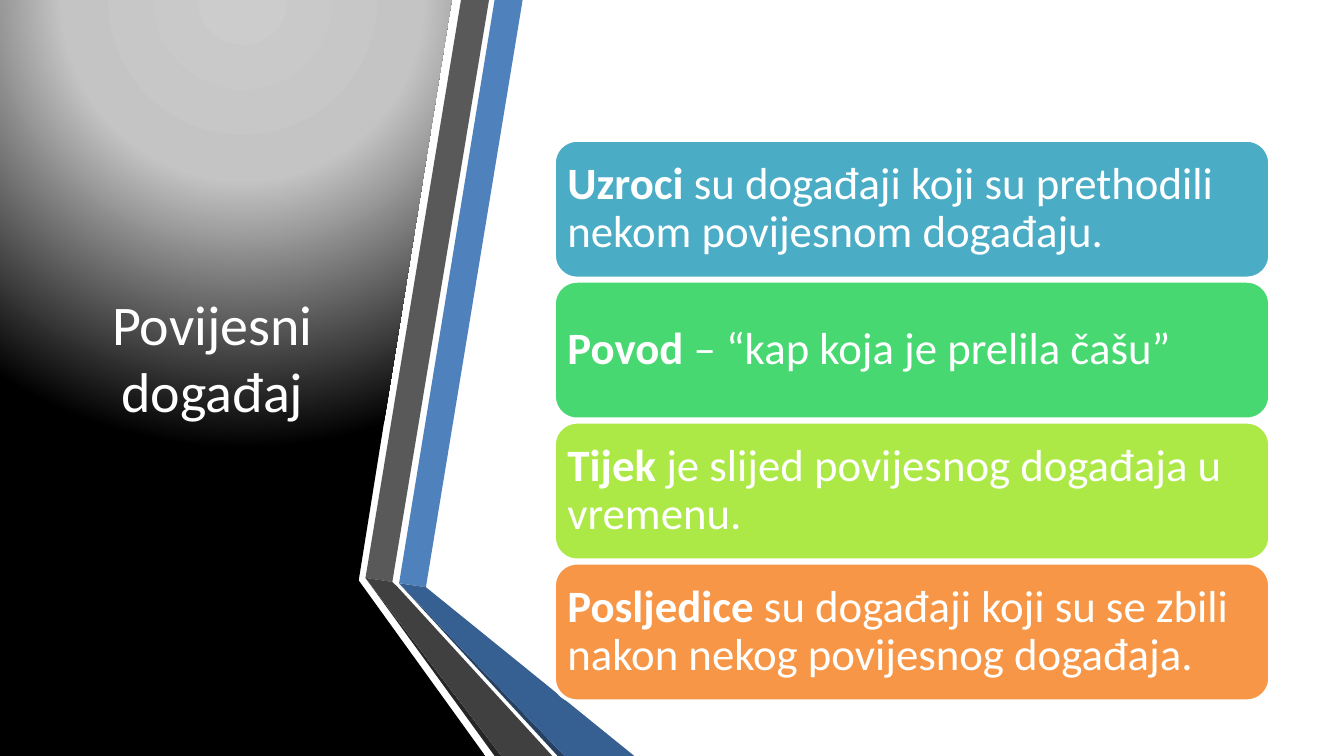
"""Build the slide on the parts of a historical event: causes, trigger, course and consequences."""
from lxml.etree import SubElement
from pptx import Presentation
from pptx.dml.color import RGBColor
from pptx.enum.shapes import MSO_SHAPE
from pptx.enum.text import MSO_ANCHOR, PP_ALIGN
from pptx.oxml.ns import qn
from pptx.util import Pt

WHITE = RGBColor(0xFF, 0xFF, 0xFF)
LIGHT_GRAY = RGBColor(0xCC, 0xCC, 0xCC)
SILVER = RGBColor(0xC4, 0xC4, 0xC4)
BLACK = RGBColor(0x00, 0x00, 0x00)
BLUE = RGBColor(0x4F, 0x81, 0xBD)
DARK_BLUE = RGBColor(0x37, 0x60, 0x92)
NAVY = RGBColor(0x25, 0x40, 0x61)
GRAY = RGBColor(0x59, 0x59, 0x59)
CHARCOAL = RGBColor(0x40, 0x40, 0x40)
DARK_CHARCOAL = RGBColor(0x26, 0x26, 0x26)
TEAL = RGBColor(0x4B, 0xAC, 0xC6)
GREEN = RGBColor(0x47, 0xD8, 0x72)
LIME = RGBColor(0xAC, 0xE9, 0x46)
ORANGE = RGBColor(0xF7, 0x96, 0x46)


def apply_format(target, values):
    for name, value in values.items():
        setattr(target, name, value)


def add_polygon(shapes, points, color):
    corners = [(Pt(x), Pt(y)) for x, y in points]
    builder = shapes.build_freeform(*corners[0])
    builder.add_line_segments(corners[1:], close=True)
    polygon = builder.convert_to_shape()
    polygon.shadow.inherit = False
    polygon.line.fill.background()
    polygon.fill.solid()
    polygon.fill.fore_color.rgb = color
    return polygon


prs = Presentation()
prs.slide_width, prs.slide_height = Pt(720), Pt(405)
slide = prs.slides.add_slide(prs.slide_layouts[5])
shapes = slide.shapes

panel = add_polygon(shapes, [(0, 0), (242, 0), (192.2, 311), (260, 405), (0, 405)], BLACK)
properties = panel._element.spPr
solid = properties.find(qn("a:solidFill"))
gradient = properties.makeelement(qn("a:gradFill"), {"rotWithShape": "1"})
properties.replace(solid, gradient)
stops = SubElement(gradient, qn("a:gsLst"))
for percent, color in [(0, LIGHT_GRAY), (40, SILVER), (100, BLACK)]:
    stop = SubElement(stops, qn("a:gs"), pos=str(percent * 1000))
    SubElement(stop, qn("a:srgbClr"), val=str(color))
circle = SubElement(gradient, qn("a:path"), {"path": "circle"})
SubElement(circle, qn("a:fillToRect"), l="50000", t="-80000", r="50000", b="180000")

blue_left, blue_right = (213.8, 312.5), (228.2, 314.6)
gray_left, gray_right = (195.8, 309.6), (210.2, 311.8)
for points, color in [
    ([blue_left, blue_right, (280, 0), (265, 0)], BLUE),
    ([gray_left, gray_right, (262, 0), (247, 0)], GRAY),
    ([gray_left, (265, 405), (268.6, 405)], DARK_CHARCOAL),
    ([blue_left, (298.8, 405), (302.4, 405)], NAVY),
    ([blue_left, (302.4, 405), (339.8, 405), blue_right], DARK_BLUE),
    ([gray_left, (268.6, 405), (295.9, 405), (213.1, 314.6), gray_right], CHARCOAL),
]:
    add_polygon(shapes, points, color)

title = shapes.title
title._element.getparent().append(title._element)
apply_format(title, {"left": Pt(31.7), "top": Pt(40.3), "width": Pt(164.2), "height": Pt(301.7)})
title.text_frame.text = "Povijesni događaj"
apply_format(title.text_frame, {"vertical_anchor": MSO_ANCHOR.MIDDLE, "word_wrap": True})
heading = title.text_frame.paragraphs[0]
heading.alignment = PP_ALIGN.CENTER
apply_format(heading.font, {"name": "Calibri", "size": Pt(30)})
heading.font.color.rgb = WHITE

card_frame = {
    "vertical_anchor": MSO_ANCHOR.MIDDLE,
    "word_wrap": True,
    "margin_left": Pt(3.6),
    "margin_right": Pt(3.6),
    "margin_top": Pt(3.6),
    "margin_bottom": Pt(3.6),
}
terms = [
    ("Uzroci", " su događaji koji su prethodili nekom povijesnom događaju.", TEAL),
    ("Povod", " – “kap koja je prelila čašu”", GREEN),
    ("Tijek", " je slijed povijesnog događaja u vremenu.", LIME),
    ("Posljedice", " su događaji koji su se zbili nakon nekog povijesnog događaja.", ORANGE),
]
for row, (term, meaning, color) in enumerate(terms):
    card = shapes.add_shape(
        MSO_SHAPE.ROUNDED_RECTANGLE, Pt(296.8), Pt(75 + 75.5 * row), Pt(383.6), Pt(74.2)
    )
    card.shadow.inherit = False
    card.fill.solid()
    card.fill.fore_color.rgb = color
    card.line.color.rgb = WHITE
    card.line.width = Pt(2)
    apply_format(card.text_frame, card_frame)
    definition = card.text_frame.paragraphs[0]
    apply_format(definition, {"alignment": PP_ALIGN.LEFT, "line_spacing": 0.9})
    for text, bold in [(term, True), (meaning, False)]:
        run = definition.add_run()
        run.text = text
        apply_format(run.font, {"name": "Calibri", "size": Pt(24), "bold": bold})
        run.font.color.rgb = WHITE

prs.save("out.pptx")
